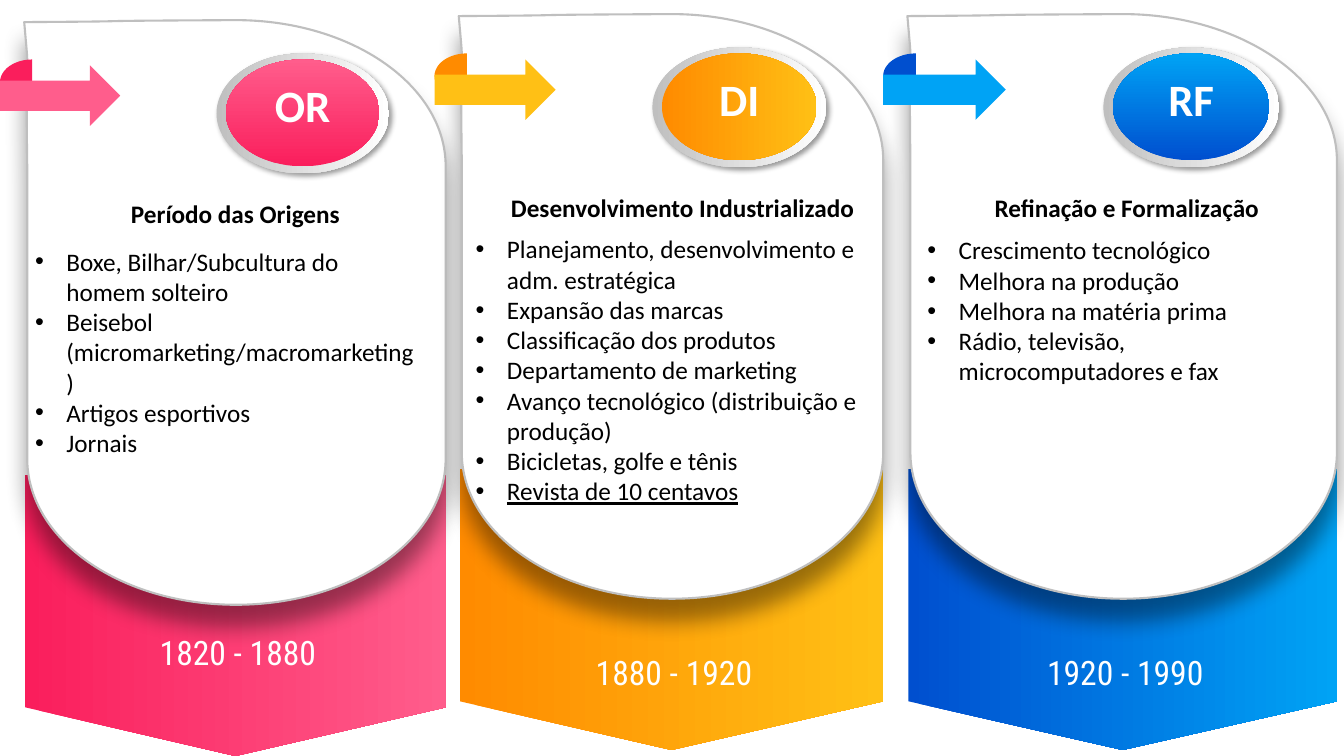
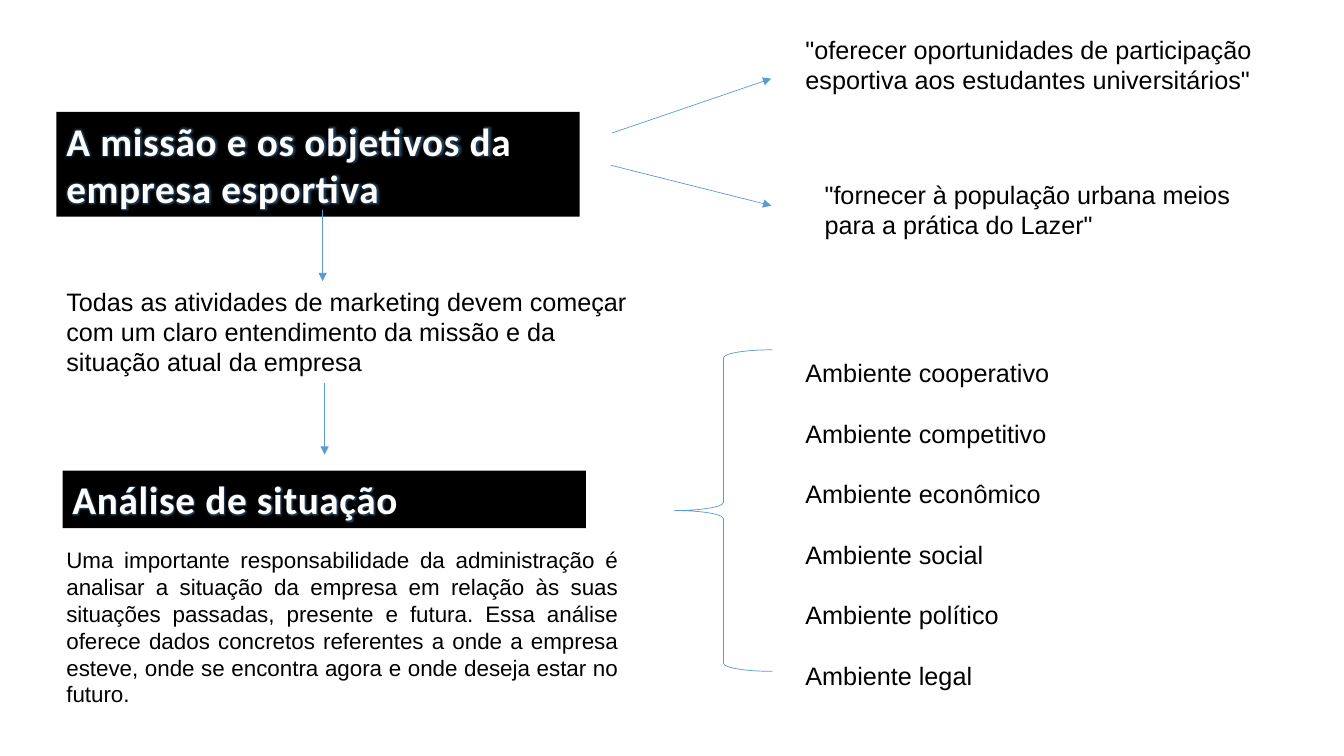
from lxml import etree
from pptx import Presentation
from pptx.dml.color import RGBColor
from pptx.enum.shapes import MSO_CONNECTOR, MSO_SHAPE
from pptx.enum.text import MSO_AUTO_SIZE, PP_ALIGN
from pptx.oxml import parse_xml
from pptx.oxml.ns import nsdecls, qn
from pptx.util import Inches, Pt

PENTAGON, PIE, ARROW = MSO_SHAPE.PENTAGON, MSO_SHAPE.PIE, MSO_SHAPE.RIGHT_ARROW
OVAL, BRACE = MSO_SHAPE.OVAL, MSO_SHAPE.LEFT_BRACE
STRAIGHT = MSO_CONNECTOR.STRAIGHT
LEFT, CENTER, JUSTIFY = PP_ALIGN.LEFT, PP_ALIGN.CENTER, PP_ALIGN.JUSTIFY
FIT = MSO_AUTO_SIZE.SHAPE_TO_FIT_TEXT

COLORS = {
    "black": "000000", "white": "FFFFFF", "heading": "FEFEFE",
    "silver": "BFBFBF", "blue": "5B9BD5",
    "pink_dark": "FA1E5C", "pink": "FF5D8C",
    "gold_dark": "FF8B00", "gold": "FFC015",
    "azure_dark": "004FCF", "azure": "00A3F5",
}
BODY, CARD, YEARS = "Arial", "Calibri", "Roboto Condensed"

# Title, list and years boxes: see add_period
PERIODS = [
    dict(x=0.25, y=0.2, w=4.17, color="pink", badge="OR", badge_angle=90,
         title="Período das Origens", title_shift=0, title_size=(3.38, 0.91),
         list_x=0, list_y=2.19, list_h=2.59,
         years="1820 - 1880", years_y=6.02, years_h=1.17,
         items=["Boxe, Bilhar/Subcultura do homem solteiro",
                "Beisebol (micromarketing/macromarketing)",
                "Artigos esportivos", "Jornais"]),
    dict(x=4.56, y=0.14, w=4.2, color="gold", badge="DI", badge_angle=0,
         title="Desenvolvimento Industrializado", title_shift=0.11,
         title_size=(4.14, 0.72), list_x=0.06, list_y=2.13, list_h=2.83,
         years="1880 - 1920", years_y=6.28, years_h=0.52,
         items=["Planejamento, desenvolvimento e adm. estratégica",
                "Expansão das marcas", "Classificação dos produtos",
                "Departamento de marketing",
                "Avanço tecnológico (distribuição e produção)",
                "Bicicletas, golfe e tênis", "Revista de 10 centavos"],
         underlined="Revista de 10 centavos"),
    dict(x=9.01, y=0.14, w=4.25, color="azure", badge="RF", badge_angle=90,
         title="Refinação e Formalização", title_shift=0.04,
         title_size=(3.35, 0.4), list_x=0.09, list_y=2.14, list_h=2.22,
         years="1920 - 1990", years_y=6.28, years_h=0.5,
         items=["Crescimento tecnológico", "Melhora na produção",
                "Melhora na matéria prima",
                "Rádio, televisão, microcomputadores e fax"]),
]
ENVIRONMENTS = ["Ambiente " + kind for kind in (
    "cooperativo", "competitivo", "econômico", "social", "político", "legal")]


def rgb(name):
    return RGBColor.from_string(COLORS[name])


def box(x, y, w, h):
    return [Inches(v) for v in (x, y, w, h)]


def add_shadow(shape, blur, dist, angle):
    shape._element.spPr.append(parse_xml(
        f'<a:effectLst {nsdecls("a")}><a:outerShdw blurRad="{Pt(blur)}" '
        f'dist="{Pt(dist)}" dir="{angle * 60000}" algn="ctr" rotWithShape="0">'
        f'<a:srgbClr val="{COLORS["black"]}"><a:alpha val="40000"/></a:srgbClr>'
        '</a:outerShdw></a:effectLst>'))


def paint(shape, fill=None, line=None, width=0.5, angle=0):
    """Fill with one colour name, a pair for a gradient, or nothing."""
    if isinstance(fill, tuple):
        shape.fill.gradient()
        shape.fill.gradient_angle = angle
        for stop, name in zip(shape.fill.gradient_stops, fill):
            stop.color.rgb = rgb(name)
    elif fill:
        shape.fill.solid()
        shape.fill.fore_color.rgb = rgb(fill)
    else:
        shape.fill.background()
    if line:
        shape.line.color.rgb = rgb(line)
        shape.line.width = Pt(width)
    else:
        shape.line.fill.background()


def add_preset(shapes, kind, x, y, w, h, adjust=(), **look):
    sp = shapes.add_shape(kind, *box(x, y, w, h))
    for i, value in enumerate(adjust):
        sp.adjustments[i] = value
    paint(sp, **look)
    return sp


def add_bullet(p):
    pPr = p._p.get_or_add_pPr()
    pPr.set("marL", str(Inches(0.31)))
    pPr.set("indent", str(Inches(-0.31)))
    etree.SubElement(pPr, qn("a:buFont"), typeface="Arial")
    etree.SubElement(pPr, qn("a:buChar"), char="•")


def add_glow_outline(r):
    rPr = r._r.get_or_add_rPr()
    rPr.set("spc", "50")
    color = f'<a:srgbClr val="{COLORS["blue"]}"'
    rPr.insert(0, parse_xml(
        f'<a:ln {nsdecls("a")} w="{Pt(0.75)}"><a:solidFill>{color}/>'
        '</a:solidFill></a:ln>'))
    rPr.find(qn("a:solidFill")).addnext(parse_xml(
        f'<a:effectLst {nsdecls("a")}><a:glow rad="{Pt(3)}">{color}>'
        '<a:alpha val="40000"/></a:srgbClr></a:glow></a:effectLst>'))


def add_text(shapes, text, x, y, w, h, size=18, font=BODY, color="black",
             bold=None, align=LEFT, wrap=True, bullets=False, spacing=None,
             underlined=None, fill=None, glow=False):
    """Write a string, or a list with one paragraph per entry."""
    sp = shapes.add_textbox(*box(x, y, w, h))
    paint(sp, fill)
    tf = sp.text_frame
    tf.word_wrap = wrap
    tf.auto_size = FIT
    lines = [text] if isinstance(text, str) else text
    for i, line in enumerate(lines):
        p = tf.add_paragraph() if i else tf.paragraphs[0]
        p.alignment = align
        if spacing:
            p.line_spacing = spacing
        if bullets:
            add_bullet(p)
        r = p.add_run()
        r.text = line
        r.font.size = Pt(size)
        r.font.name = font
        r.font.bold = bold
        r.font.color.rgb = rgb(color)
        if line == underlined:
            r.font.underline = True
        if glow:
            add_glow_outline(r)
    return sp


def add_arrow(shapes, x1, y1, x2, y2):
    line = shapes.add_connector(STRAIGHT, *box(x1, y1, x2, y2))
    line.line.color.rgb = rgb("blue")
    line.line.width = Pt(0.5)
    etree.SubElement(line.line._get_or_add_ln(), qn("a:tailEnd"), type="triangle")
    etree.SubElement(line._element.spPr, qn("a:effectLst"))


def bend(segment, controls):
    """Turn a straight freeform segment into a cubic curve."""
    curve = etree.Element(qn("a:cubicBezTo"))
    for px, py in controls:
        etree.SubElement(curve, qn("a:pt"), x=str(Inches(px)), y=str(Inches(py)))
    curve.append(segment[0])
    segment.getparent().replace(segment, curve)


def add_card(shapes, x, y, w):
    """White card with a rounded bottom and one rounded top corner."""
    left, mid, top, low, end = 0.03, w / 2 + 0.01, 1.45, 4.35, 5.8
    arm, rise = 1.15, 0.8
    # Each step: control points (none for a straight side), then the end point
    steps = [
        ([(0.01, 0.03), (0.06, 0.71)], (0, 0.02)),
        ([(1.52, 0.01), (0.19, 0.01)], (mid, 0)),
        ([(mid + arm, 0), (w, top - rise)], (w, top)),
        ([], (w, low)),
        ([(w, low + rise), (mid + arm, end)], (mid, end)),
        ([(mid - arm, end), (left, low + rise)], (left, low)),
    ]
    builder = shapes.build_freeform(Inches(x + left), Inches(y + top), scale=1.0)
    builder.add_line_segments(
        [(Inches(x + px), Inches(y + py)) for _, (px, py) in steps], close=True)
    card = builder.convert_to_shape()
    segments = list(card._element.spPr.iter(qn("a:lnTo")))
    for segment, (controls, _) in zip(segments, steps):
        if controls:
            bend(segment, controls)
    paint(card, "white", "silver", 1.5)
    add_shadow(card, 16, 15, 90)


def add_period(s, x, y, w, color, badge, badge_angle, title, title_shift,
               title_size, list_x, list_y, list_h, items, years, years_y,
               years_h, underlined=None):
    shapes = s.shapes.add_group_shape().shapes
    dark = color + "_dark"
    shade = (dark, color)
    mid = x + w / 2

    # Pointed base and card
    base_h = 2.79
    base = add_preset(shapes, PENTAGON, mid - base_h / 2,
                      y + 4.51 + base_h / 2 - w / 2, base_h, w,
                      adjust=[0.173], fill=shade, angle=90)
    base.rotation = 90
    base.shadow.inherit = False
    add_card(shapes, x - 0.01, y, w + 0.01)

    # Folded arrow
    for kind, dy, width, height, adjust, fill in (
            (PIE, 0.39, 0.153 * w, 0.45, [53.527, 162], dark),
            (ARROW, 0.45, 0.286 * w, 0.6, [], color)):
        sp = add_preset(shapes, kind, x - 0.25, y + dy, width, height,
                        adjust=adjust, fill=fill)
        sp.shadow.inherit = False

    # Badge
    cx = x + 0.66 * w
    ring_w, disc_w = 0.41 * w, 0.365 * w
    ring = add_preset(shapes, OVAL, cx - ring_w / 2, y + 0.33, ring_w, 1.19,
                      fill=("silver", "white"))
    add_shadow(ring, 4, 3, 45)
    disc = add_preset(shapes, OVAL, cx - disc_w / 2, y + 0.39, disc_w, 1.06,
                      fill=shade, angle=badge_angle)
    disc.shadow.inherit = False
    add_text(shapes, badge, cx - 0.4, y + 0.52, 0.8, 0.64, size=32, font=CARD,
             color="white", bold=True, align=CENTER, wrap=False)

    # Title, list and years
    title_w, title_h = title_size
    add_text(shapes, title, mid + title_shift - title_w / 2, y + 1.72,
             title_w, title_h, font=CARD, bold=True, align=CENTER)
    add_text(shapes, items, x + list_x, y + list_y, 0.95 * w, list_h, font=CARD,
             bullets=True, underlined=underlined)
    years_w = 0.743 * w
    add_text(shapes, years, x + 0.506 * w - years_w / 2, y + years_y, years_w,
             years_h, size=24, font=YEARS, color="white", align=CENTER)


def add_heading(shapes, text, x, y, h):
    add_text(shapes, text, x, y, 5.19, h, size=28, font=CARD, color="heading",
             bold=True, fill="black", glow=True)


def build_timeline(s):
    for period in PERIODS:
        add_period(s, **period)


def build_mission(s):
    shapes = s.shapes
    # Mission and its examples
    add_heading(shapes, "A missão e os objetivos da empresa esportiva",
                0.56, 1.11, 1.04)
    add_text(shapes, '"oferecer oportunidades de participação esportiva aos '
             'estudantes universitários"', 7.89, 0.29, 5.16, 0.71)
    add_text(shapes, '"fornecer à população urbana meios para a prática do Lazer"',
             8.08, 1.73, 4.78, 0.71)
    add_text(shapes, "Todas as atividades de marketing devem começar com um claro "
             "entendimento da missão e da situação atual da empresa",
             0.56, 2.79, 5.97, 1.01)

    # Situation analysis
    add_heading(shapes, "Análise de situação", 0.62, 4.67, 0.57)
    add_text(shapes, "Uma importante responsabilidade da administração é analisar "
             "a situação da empresa em relação às suas situações passadas, presente "
             "e futura. Essa análise oferece dados concretos referentes a onde a "
             "empresa esteve, onde se encontra agora e onde deseja estar no futuro.",
             0.56, 5.37, 5.67, 1.72, size=16, align=JUSTIFY)
    add_text(shapes, ENVIRONMENTS, 7.89, 3.2, 2.89, 3.74, spacing=2.0)
    brace = add_preset(shapes, BRACE, 6.69, 3.47, 0.97, 3.19, line="blue")
    brace.shadow.inherit = False

    # Arrows
    for ends in ((6.07, 1.32, 7.65, 0.78), (6.06, 1.64, 7.65, 2.04),
                 (3.2, 2.08, 3.2, 2.79), (3.22, 3.8, 3.22, 4.51)):
        add_arrow(shapes, *ends)


def main():
    prs = Presentation()
    prs.slide_width, prs.slide_height = Inches(13.33), Inches(7.5)
    for build in (build_timeline, build_mission):
        build(prs.slides.add_slide(prs.slide_layouts[6]))
    prs.save("out.pptx")


if __name__ == "__main__":
    main()
